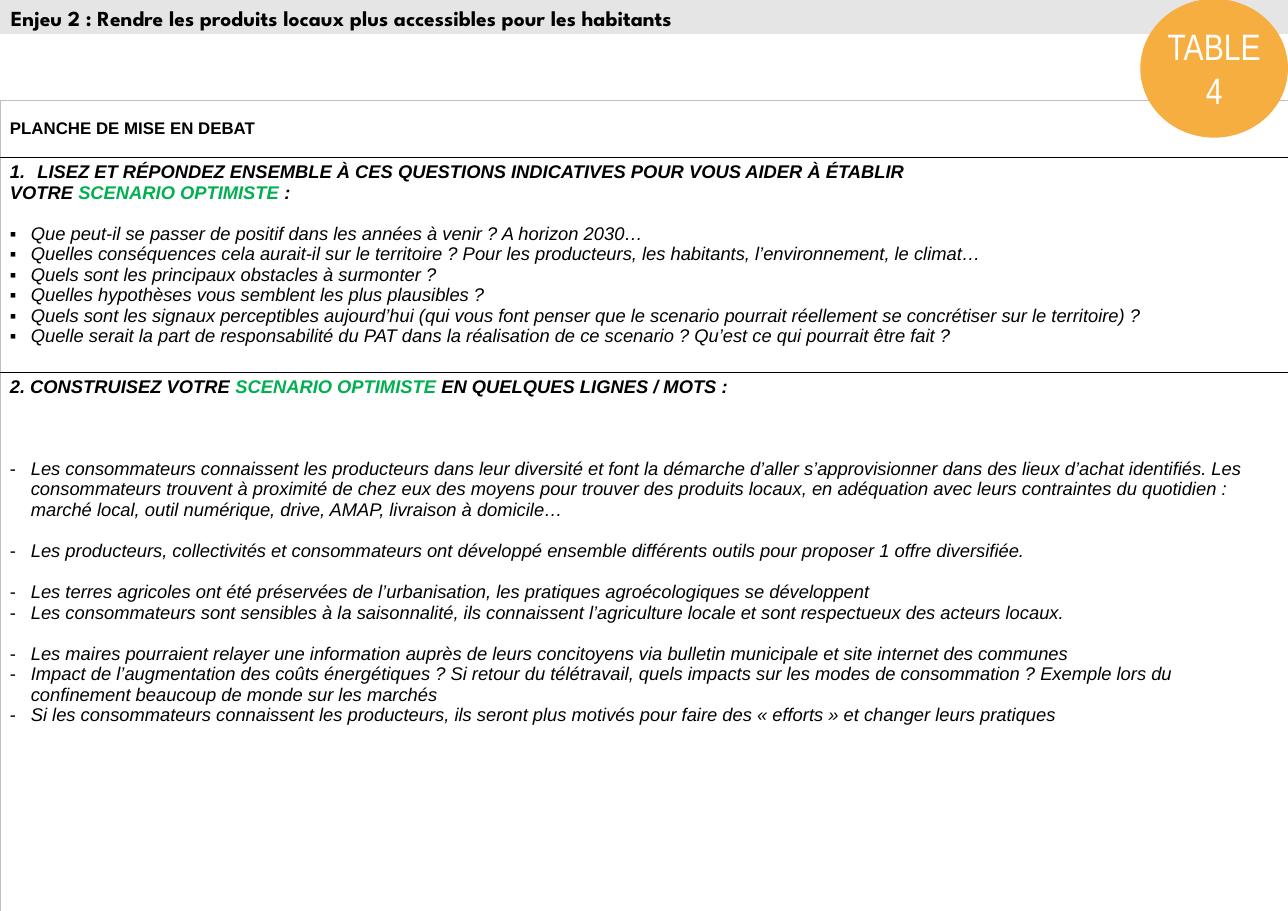
from lxml.etree import SubElement
from pptx import Presentation
from pptx.dml.color import RGBColor
from pptx.enum.shapes import MSO_SHAPE
from pptx.enum.text import MSO_ANCHOR, PP_ALIGN
from pptx.oxml.ns import qn
from pptx.util import Pt

PX = 9144  # EMU in one px, at 100 px to the inch
WIDTH, HEIGHT = 1169, 827
BLANK_LINE = 13.4  # points
COLORS = {
    "black": "000000", "white": "FFFFFF", "band": "E5E5E5",
    "badge": "F6AE40", "green": "00B050", "frame": "BFBFBF",
}
LABEL = {"size": Pt(11), "name": "Arial", "bold": True}
BODY = {"size": Pt(12), "name": "Arial", "italic": True, "bold": False}
HEADING = BODY | {"bold": True}
TITLE = {"size": Pt(14), "name": "League Spartan", "bold": True}
BADGE = {"size": Pt(24), "name": "Arial Narrow"}

# Each list item: blank lines above it, then its text
QUESTIONS = [
    (1, "Que peut-il se passer de positif dans les années à venir ? A horizon 2030…"),
    (0, "Quelles conséquences cela aurait-il sur le territoire ? Pour les producteurs, les habitants, "
        "l’environnement, le climat…"),
    (0, "Quels sont les principaux obstacles à surmonter ?"),
    (0, "Quelles hypothèses vous semblent les plus plausibles ?"),
    (0, "Quels sont les signaux perceptibles aujourd’hui (qui vous font penser que le scenario pourrait "
        "réellement se concrétiser sur le territoire) ?"),
    (0, "Quelle serait la part de responsabilité du PAT dans la réalisation de ce scenario ? "
        "Qu’est ce qui pourrait être fait ?"),
]
ANSWERS = [
    (3, "Les consommateurs connaissent les producteurs dans leur diversité et font la démarche d’aller "
        "s’approvisionner dans des lieux d’achat identifiés. Les consommateurs trouvent à proximité de chez "
        "eux des moyens pour trouver des produits locaux, en adéquation avec leurs contraintes du quotidien : "
        "marché local, outil numérique, drive, AMAP, livraison à domicile…"),
    (1, "Les producteurs, collectivités et consommateurs ont développé ensemble différents outils pour "
        "proposer 1 offre diversifiée."),
    (1, "Les terres agricoles ont été préservées de l’urbanisation, les pratiques agroécologiques se développent"),
    (0, "Les consommateurs sont sensibles à la saisonnalité, ils connaissent l’agriculture locale et sont "
        "respectueux des acteurs locaux."),
    (1, "Les maires pourraient relayer une information auprès de leurs concitoyens via bulletin municipale "
        "et site internet des communes"),
    (0, "Impact de l’augmentation des coûts énergétiques ? Si retour du télétravail, quels impacts sur les "
        "modes de consommation ? Exemple lors du confinement beaucoup de monde sur les marchés"),
    (0, "Si les consommateurs connaissent les producteurs, ils seront plus motivés pour faire des "
        "« efforts » et changer leurs pratiques"),
]


def color(name):
    return RGBColor.from_string(COLORS[name])


class Board:
    """Draws the elements of the debate board on one slide."""

    def __init__(self, presentation):
        self.slide = presentation.slides.add_slide(presentation.slide_layouts[6])

    def shape(self, kind, box, fill):
        shape = self.slide.shapes.add_shape(kind, *(value * PX for value in box))
        shape.shadow.inherit = False
        shape.fill.solid()
        shape.fill.fore_color.rgb = color(fill)
        shape.line.fill.background()
        shape.text_frame.word_wrap = True
        return shape

    def paragraph(self, frame, runs, style, blank_lines=0, bullet=None, indent=0):
        """Fill the empty first paragraph, or add one; runs are (text, colour) pairs."""
        first = frame.paragraphs[0]
        paragraph = frame.add_paragraph() if first.runs else first
        paragraph.alignment = PP_ALIGN.LEFT
        if blank_lines:
            paragraph.space_before = Pt(BLANK_LINE * blank_lines)
        if bullet:
            properties = paragraph._p.get_or_add_pPr()
            properties.set("marL", str(indent * PX))
            properties.set("indent", str(-indent * PX))
            bullet_color = SubElement(properties, qn("a:buClr"))
            SubElement(bullet_color, qn("a:srgbClr"), val=COLORS["black"])
            SubElement(properties, qn("a:buFont"), typeface="Arial")
            if bullet == "1.":
                SubElement(properties, qn("a:buAutoNum"), type="arabicPeriod")
            else:
                SubElement(properties, qn("a:buChar"), char=bullet)
        for text, color_name in runs:
            run = paragraph.add_run()
            run.text = text
            run.font.color.rgb = color(color_name)
            for attribute, value in style.items():
                setattr(run.font, attribute, value)
        return paragraph

    def bullets(self, frame, items, bullet):
        for blank_lines, text in items:
            self.paragraph(frame, [(text, "black")], BODY, blank_lines, bullet, 19)

    def border(self, cell, side, color_name, points):
        line = SubElement(cell._tc.get_or_add_tcPr(), qn(f"a:ln{side}"), w=str(Pt(points)))
        fill = SubElement(line, qn("a:solidFill"))
        SubElement(fill, qn("a:srgbClr"), val=COLORS[color_name])

    def table(self, left, top, width, heights):
        """Add a one-column table and return its cells."""
        table = self.slide.shapes.add_table(
            len(heights), 1, left * PX, top * PX, width * PX, sum(heights) * PX).table
        table.first_row = table.horz_banding = False
        margins = {"margin_left": 9, "margin_top": 4, "margin_right": 9, "margin_bottom": 4}
        frame_line, divider = ("frame", 0.5), ("black", 1)
        last = len(heights) - 1
        for index, height in enumerate(heights):
            table.rows[index].height = height * PX
            cell = table.cell(index, 0)
            for attribute, value in margins.items():
                setattr(cell, attribute, value * PX)
            self.border(cell, "L", *frame_line)
            self.border(cell, "R", *frame_line)
            self.border(cell, "T", *(divider if index else frame_line))
            self.border(cell, "B", *(divider if index < last else frame_line))
            cell.fill.solid()
            cell.fill.fore_color.rgb = color("white")
        return [table.cell(index, 0) for index in range(len(heights))]


def main():
    presentation = Presentation()
    presentation.slide_width, presentation.slide_height = WIDTH * PX, HEIGHT * PX
    board = Board(presentation)

    label, questions, scenario = board.table(0, 91, WIDTH, [52, 195, 522])
    label.vertical_anchor = MSO_ANCHOR.MIDDLE
    board.paragraph(label.text_frame, [("PLANCHE DE MISE EN DEBAT", "black")], LABEL)

    frame = questions.text_frame
    board.paragraph(frame, [(
        "LISEZ ET RÉPONDEZ ENSEMBLE À CES QUESTIONS INDICATIVES POUR VOUS AIDER À ÉTABLIR",
        "black")], HEADING, bullet="1.", indent=25)
    optimistic = ("SCENARIO OPTIMISTE ", "green")
    board.paragraph(frame, [("VOTRE ", "black"), optimistic, (":", "black")], HEADING)
    board.bullets(frame, QUESTIONS, "▪")

    frame = scenario.text_frame
    board.paragraph(frame, [("2. CONSTRUISEZ VOTRE ", "black"), optimistic,
                            ("EN QUELQUES LIGNES / MOTS :", "black")], HEADING)
    board.bullets(frame, ANSWERS, "-")

    band = board.shape(MSO_SHAPE.RECTANGLE, (0, 0, WIDTH, 34), "band")
    band.text_frame.vertical_anchor = MSO_ANCHOR.TOP
    board.paragraph(band.text_frame, [(
        "Enjeu 2 : Rendre les produits locaux plus accessibles pour les habitants", "black")], TITLE)
    board.shape(MSO_SHAPE.RECTANGLE, (0, 31, WIDTH, 30), "white")

    badge = board.shape(MSO_SHAPE.OVAL, (1035, -1, 134, 126), "badge")
    frame = badge.text_frame
    frame.vertical_anchor = MSO_ANCHOR.MIDDLE
    for side in ("left", "top", "right", "bottom"):
        setattr(frame, f"margin_{side}", 4 * PX)
    board.paragraph(frame, [("TABLE 4", "white")], BADGE).alignment = PP_ALIGN.CENTER

    presentation.save("out.pptx")


if __name__ == "__main__":
    main()
